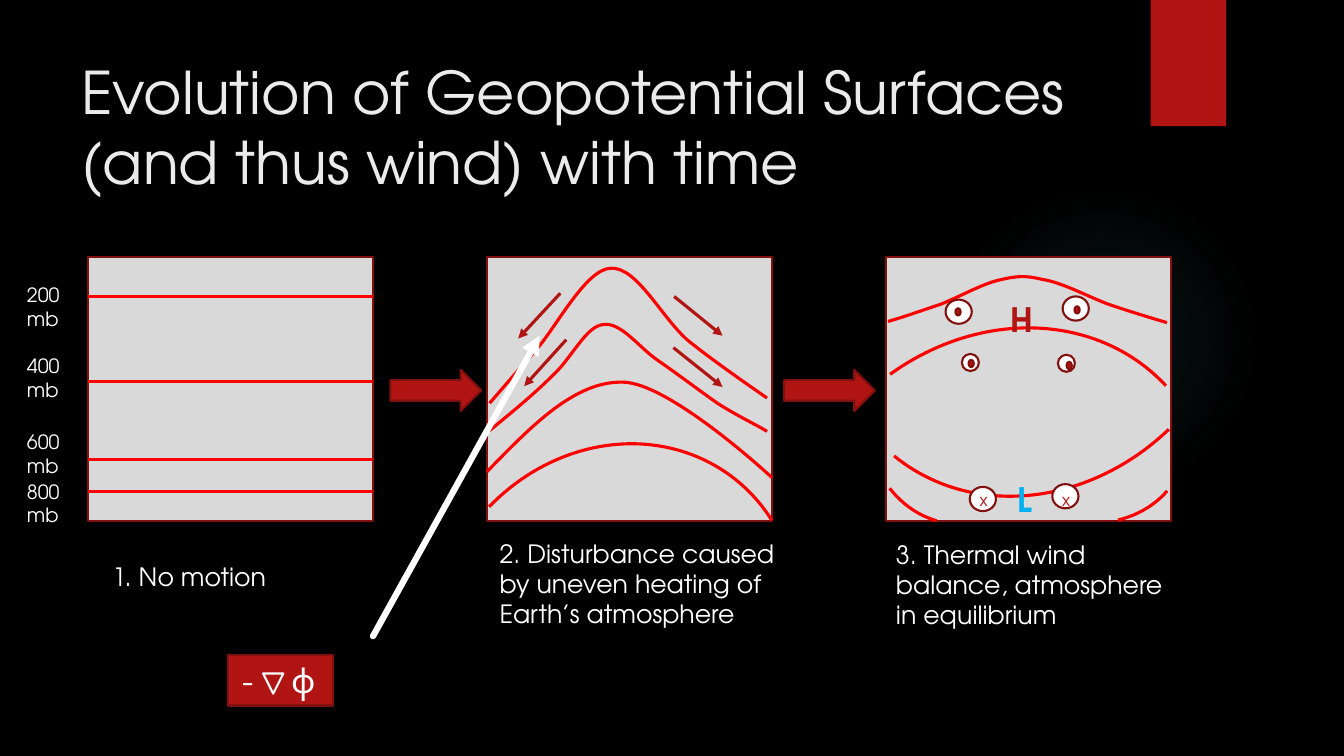
from lxml import etree
from pptx import Presentation
from pptx.dml.color import RGBColor
from pptx.enum import shapes, text
from pptx.oxml import ns
from pptx.util import Cm, Pt

FONT = "TeX Gyre Adventor"
BLACK = RGBColor(0x00, 0x00, 0x00)
WHITE = RGBColor(0xFF, 0xFF, 0xFF)
OFF_WHITE = RGBColor(0xEB, 0xEB, 0xEB)
GREY = RGBColor(0xD9, 0xD9, 0xD9)
CRIMSON = RGBColor(0xB0, 0x15, 0x13)
MAROON = RGBColor(0x82, 0x10, 0x0E)
RED = RGBColor(0xFF, 0x00, 0x00)
SKY = RGBColor(0x00, 0xB0, 0xF0)
TEAL = RGBColor(0x50, 0xB9, 0xC1)

PANEL_TOP, PANEL_WIDTH, PANEL_HEIGHT = 6.48, 7.19, 6.65
PANEL_LEFTS = [2.22 + 10.05 * i for i in range(3)]

# Each contour is a start point followed by cubic segments of three points.
DISTURBED = [
    [(12.27, 11.89), (13.39, 10.74), (14.48, 9.6), (15.7, 9.63),
     (16.89, 9.65), (19.46, 12.04), (19.46, 12.04)],
    [(12.34, 10.16), (12.67, 9.78), (12.98, 9.42), (13.49, 8.84),
     (14, 8.28), (14.76, 6.78), (15.39, 6.76),
     (16.05, 6.71), (16.69, 8.03), (17.35, 8.59),
     (18.01, 9.12), (18.97, 9.78), (19.33, 10.03)],
    [(12.34, 10.85), (12.9, 10.39), (13.46, 9.93), (13.92, 9.47),
     (14.4, 9.04), (14.76, 8.23), (15.19, 8.18),
     (15.65, 8.1), (16.1, 8.76), (16.59, 9.09),
     (17.07, 9.42), (17.65, 9.86), (18.08, 10.16),
     (18.54, 10.46), (19.13, 10.74), (19.33, 10.87)],
]
BALANCED = [
    (22.38, 8.1), (22.81, 7.98), (23.24, 7.82), (23.7, 7.67),
    (24.16, 7.49), (24.74, 7.16), (25.17, 7.06),
    (25.6, 6.96), (25.81, 6.93), (26.26, 7.04),
    (26.75, 7.11), (27.41, 7.47), (27.94, 7.67),
    (28.47, 7.85), (29.13, 8.05), (29.41, 8.13)]


def set_line(line, color, width):
    line.color.rgb = color
    line.width = Pt(width)


def add_block(slide, kind, box, fill=None, line=MAROON, width=1.5, turn=0):
    block = slide.shapes.add_shape(kind, *map(Cm, box))
    block.shadow.inherit = False
    block.rotation = turn
    if fill is None:
        block.fill.background()
    else:
        block.fill.solid()
        block.fill.fore_color.rgb = fill
    if line is None:
        block.line.fill.background()
    else:
        set_line(block.line, line, width)
    return block


def add_glow(slide, box):
    glow = add_block(slide, shapes.MSO_SHAPE.OVAL, box, line=None)
    gradient = etree.Element(ns.qn("a:gradFill"), rotWithShape="1")
    stops = etree.SubElement(gradient, ns.qn("a:gsLst"))
    for position, opacity in [(0, 7), (36, 6), (69, 0)]:
        stop = etree.SubElement(stops, ns.qn("a:gs"), pos=str(position * 1000))
        color = etree.SubElement(stop, ns.qn("a:srgbClr"), val=str(TEAL))
        etree.SubElement(color, ns.qn("a:alpha"), val=str(opacity * 1000))
    circle = etree.SubElement(gradient, ns.qn("a:path"), path="circle")
    etree.SubElement(circle, ns.qn("a:fillToRect"),
                     l="50000", t="50000", r="50000", b="50000")
    properties = glow.element.spPr
    properties.replace(properties.find(ns.qn("a:noFill")), gradient)


def add_label(slide, box, words, size, color=WHITE, bold=False,
              tab=None, margin_right=0.25):
    frame = slide.shapes.add_textbox(*map(Cm, box)).text_frame
    frame.word_wrap = True
    frame.margin_right = Cm(margin_right)
    paragraph = frame.paragraphs[0]
    paragraph.text = words
    if tab is not None:
        tabs = etree.SubElement(paragraph._p.get_or_add_pPr(), ns.qn("a:tabLst"))
        etree.SubElement(tabs, ns.qn("a:tab"), pos=str(Cm(tab)), algn="l")
    paragraph.font.name = FONT
    paragraph.font.size = Pt(size)
    paragraph.font.bold = bold
    paragraph.font.color.rgb = color


def add_line(slide, ends, color, width, arrow=False, cap="flat"):
    line = slide.shapes.add_connector(shapes.MSO_CONNECTOR.STRAIGHT, *map(Cm, ends))
    set_line(line.line, color, width)
    properties = line.element.spPr
    outline = properties.find(ns.qn("a:ln"))
    outline.set("cap", cap)
    if arrow:
        etree.SubElement(outline, ns.qn("a:tailEnd"), type="triangle")
    etree.SubElement(properties, ns.qn("a:effectLst"))


def add_contour(slide, points):
    builder = slide.shapes.build_freeform(*map(Cm, points[0]))
    builder.add_line_segments([tuple(map(Cm, p)) for p in points[1:]], close=False)
    contour = builder.convert_to_shape()
    contour.shadow.inherit = False
    contour.fill.background()
    set_line(contour.line, RED, 2.25)
    route = next(contour.element.iter(ns.qn("a:path")))
    strokes = route.findall(ns.qn("a:lnTo"))
    for i in range(0, len(strokes), 3):
        cubic = etree.SubElement(route, ns.qn("a:cubicBezTo"))
        for stroke in strokes[i:i + 3]:
            cubic.append(stroke[0])
            route.remove(stroke)


def add_arc(slide, box, turn, start, end):
    arc = add_block(slide, shapes.MSO_SHAPE.ARC, box, line=RED, width=2.25, turn=turn)
    arc.adjustments[0] = start
    arc.adjustments[1] = end


def add_wind_symbols(slide):
    oval = shapes.MSO_SHAPE.OVAL
    large, small, dot = (0.66, 0.61), (0.43, 0.43), (0.13, 0.18)
    for ring, size, center in [
            ((23.83, 7.55), large, (24.08, 7.77)),
            ((26.78, 7.47), large, (27.08, 7.72)),
            ((24.24, 8.92), small, (24.41, 9.07)),
            ((26.66, 8.94), small, (26.88, 9.12))]:
        add_block(slide, oval, ring + size, WHITE)
        add_block(slide, oval, center + dot, CRIMSON)
    for left, top in [(24.44, 12.27), (26.52, 12.2)]:
        add_block(slide, oval, (left, top) + large, WHITE)
        add_label(slide, (left, 12.22, 1.02, 0.76), "x", 12, CRIMSON)


def main():
    deck = Presentation()
    deck.slide_width, deck.slide_height = Cm(33.87), Cm(19.05)
    slide = deck.slides.add_slide(deck.slide_layouts[6])
    slide.background.fill.solid()
    slide.background.fill.fore_color.rgb = BLACK
    rectangle = shapes.MSO_SHAPE.RECTANGLE

    add_glow(slide, (23.9, 4.65, 7.82, 7.82))
    add_block(slide, rectangle, (29, 0, 1.9, 3.18), CRIMSON, None)
    add_block(slide, rectangle, (5.75, 16.51, 2.64, 1.27), CRIMSON)
    add_label(slide, (1.8, 1.27, 26.14, 3.89),
              "Evolution of Geopotential Surfaces (and thus wind) with time",
              42, OFF_WHITE)

    for left in PANEL_LEFTS:
        add_block(slide, rectangle, (left, PANEL_TOP, PANEL_WIDTH, PANEL_HEIGHT), GREY)
    for left in (9.84, 19.76):
        add_block(slide, shapes.MSO_SHAPE.RIGHT_ARROW, (left, 9.32, 2.29, 1.04), CRIMSON)

    for points in DISTURBED:
        add_contour(slide, points)
    add_arc(slide, (10.49, 11.51, 9.96, 8.99), 305.4, 168.27, 11.17)

    for pressure, level, label_top in [
            (200, 7.47, 7.01), (400, 9.61, 8.8), (600, 11.58, 10.72), (800, 12.38, 11.96)]:
        add_line(slide, (2.22, level, 9.4, level), RED, 2.25)
        add_label(slide, (0.43, label_top, 1.35, 1.45), f"{pressure} mb", 14, margin_right=0)

    for ends in [(16.99, 7.47, 18.21, 8.46), (14.12, 7.39, 13.06, 8.53),
                 (16.97, 8.76, 18.21, 9.75), (14.27, 8.56, 13.21, 9.73)]:
        add_line(slide, ends, CRIMSON, 2.25, arrow=True)

    for box, turn, start, end in [
            ((19.43, 8.64, 11.53, 10.08), 314.8, 169.3, 1.08),
            ((20.37, 1.95, 11.53, 10.08), 126.9, 169.3, 1.08),
            ((22.05, 9.14, 3.53, 4.17), 142.3, 188.44, 0),
            ((26.01, 9.3, 3.53, 4.17), 77, 188.44, 0)]:
        add_arc(slide, box, turn, start, end)
    add_contour(slide, BALANCED)

    add_label(slide, (25.4, 11.94, 1.93, 1.27), "L", 24, SKY, bold=True)
    add_label(slide, (25.22, 7.42, 1.93, 1.27), "H", 24, CRIMSON, bold=True)
    add_wind_symbols(slide)

    for box, caption in [
            ((2.58, 14.02, 6.35, 1.02), "1. No motion"),
            ((12.34, 13.44, 8.08, 2.57),
             "2. Disturbance caused by uneven heating of Earth’s atmosphere"),
            ((22.33, 13.46, 7.47, 2.57),
             "3. Thermal wind balance, atmosphere in equilibrium")]:
        add_label(slide, box, caption, 18)

    add_line(slide, (9.4, 16.03, 13.6, 8.46), WHITE, 4.5, arrow=True, cap="rnd")
    add_label(slide, (5.87, 16.51, 3.05, 1.27), "-\tɸ", 24, tab=1.22)
    add_block(slide, shapes.MSO_SHAPE.ISOSCELES_TRIANGLE, (6.63, 16.97, 0.51, 0.51),
              line=WHITE, turn=180)
    deck.save("out.pptx")


if __name__ == "__main__":
    main()
